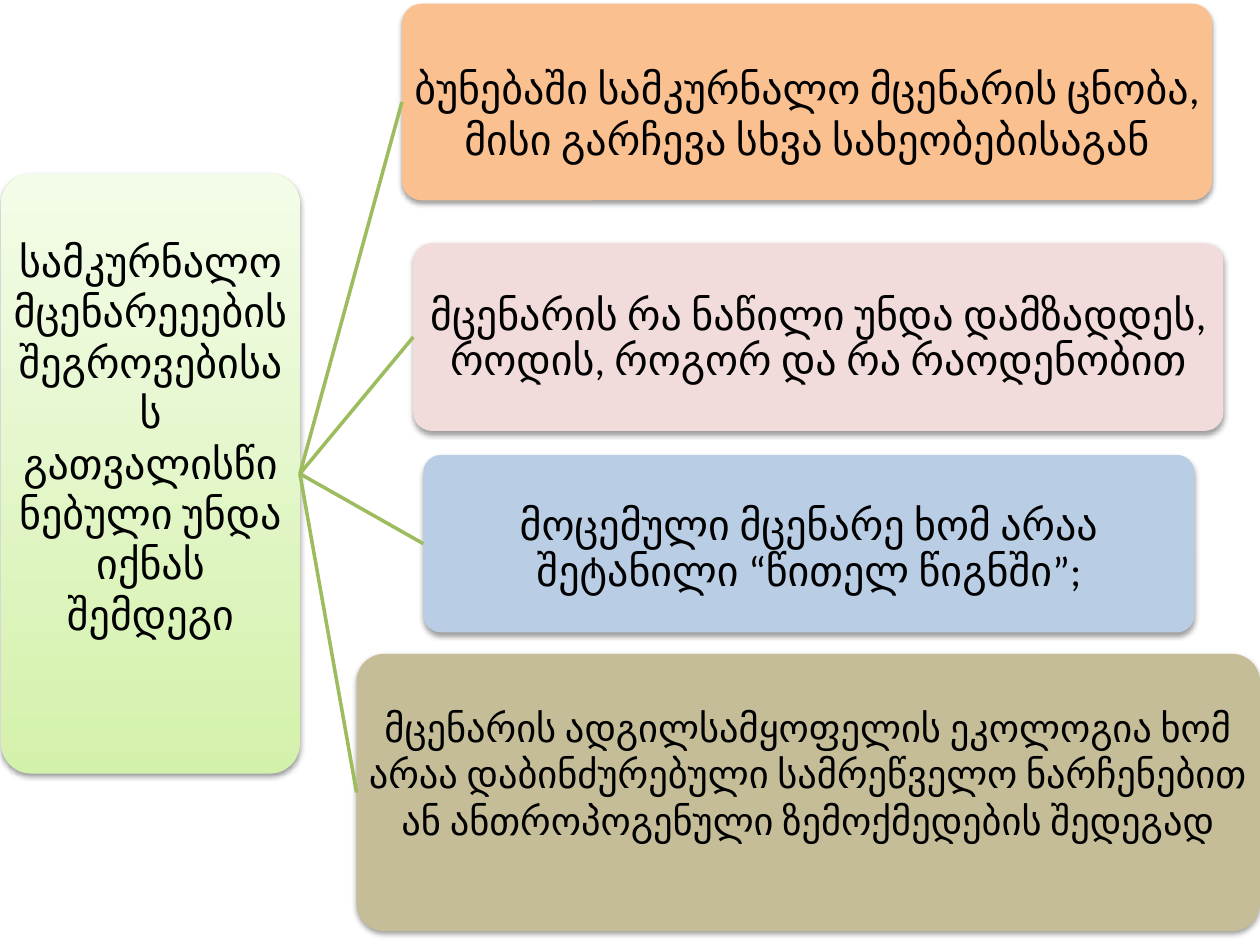
from lxml import etree
from pptx import Presentation
from pptx.dml.color import RGBColor
from pptx.enum import shapes, text
from pptx.oxml import ns
from pptx.util import Inches, Pt

BLACK = RGBColor(0x00, 0x00, 0x00)
BRANCH_GREEN = RGBColor(0x9C, 0xBC, 0x5D)
ROOT_GREENS = (RGBColor(0xD4, 0xF1, 0xAB), RGBColor(0xF3, 0xFC, 0xE8))
ORANGE = RGBColor(0xFA, 0xC0, 0x90)
PINK = RGBColor(0xF2, 0xDC, 0xDB)
BLUE = RGBColor(0xB9, 0xCD, 0xE5)
TAN = RGBColor(0xC4, 0xBD, 0x97)

FONT = "Calibri"
MARGIN = 0.02

# Content: wording, box (left, top, width, height), size, line spacing,
# and how far the text sits below (+) or above (-) the middle of its box
ROOT = ("სამკურნალო მცენარეეების შეგროვებისას გათვალისწინებული უნდა იქნას შემდეგი",
        (0.01, 1.38, 2.37, 4.76), 24, 1.0, -0.29)
CONDITIONS = [
    (("ბუნებაში სამკურნალო მცენარის ცნობა, მისი გარჩევა სხვა სახეობებისაგან",
      (3.19, 0.03, 6.43, 1.56), 24, 1.0, 0.09), ORANGE),
    (("მცენარის რა ნაწილი უნდა დამზადდეს, როდის, როგორ და რა რაოდენობით",
      (3.28, 1.93, 6.43, 1.49), 24, 0.9, 0.02), PINK),
    (("მოცემული მცენარე ხომ არაა შეტანილი “წითელ წიგნში”;",
      (3.36, 3.61, 6.12, 1.41), 24, 0.9, 0.05), BLUE),
    (("მცენარის ადგილსამყოფელის ეკოლოგია ხომ არაა დაბინძურებული სამრეწველო "
      "ნარჩენებით ან ანთროპოგენული ზემოქმედების შედეგად",
      (2.83, 5.19, 7.17, 2.2), 22, 1.0, -0.15), TAN),
]


def add_effects(item, shadow):
    """Give the item a soft drop shadow, or none at all."""
    effects = etree.SubElement(item._element.spPr, ns.qn("a:effectLst"))
    if shadow:
        outer = etree.SubElement(effects, ns.qn("a:outerShdw"), blurRad=str(Pt(3.1)),
                                 dist=str(Pt(1.6)), dir="5400000", rotWithShape="0")
        color = etree.SubElement(outer, ns.qn("a:srgbClr"), val="000000")
        etree.SubElement(color, ns.qn("a:alpha"), val="38000")


def add_box(slide, content):
    wording, place, size, spacing, shift = content
    box = slide.shapes.add_shape(shapes.MSO_SHAPE.ROUNDED_RECTANGLE,
                                 *(Inches(length) for length in place))
    box.adjustments[0] = 0.1
    box.line.fill.background()
    add_effects(box, shadow=True)

    frame = box.text_frame
    frame.word_wrap = True
    frame.vertical_anchor = text.MSO_ANCHOR.MIDDLE
    frame.margin_left = frame.margin_right = Inches(MARGIN)
    frame.margin_top = Inches(MARGIN + 2 * max(shift, 0))
    frame.margin_bottom = Inches(MARGIN + 2 * max(-shift, 0))

    paragraph = frame.paragraphs[0]
    paragraph.alignment = text.PP_ALIGN.CENTER
    paragraph.line_spacing = spacing
    run = paragraph.add_run()
    run.text = wording
    run.font.name = FONT
    run.font.size = Pt(size)
    run.font.color.rgb = BLACK
    return box


def add_branch(slide, root, condition):
    branch = slide.shapes.add_connector(
        shapes.MSO_CONNECTOR.STRAIGHT,
        root.left + root.width, root.top + root.height // 2,
        condition.left, condition.top + condition.height // 2)
    branch.line.color.rgb = BRANCH_GREEN
    branch.line.width = Pt(2)
    add_effects(branch, shadow=False)


def main():
    deck = Presentation()
    deck.slide_width, deck.slide_height = Inches(10), Inches(7.5)
    slide = deck.slides.add_slide(deck.slide_layouts[6])

    # Root topic, fading from green at the bottom to pale at the top
    root = add_box(slide, ROOT)
    root.fill.gradient()
    root.fill.gradient_angle = 90
    for stop, color in zip(root.fill.gradient_stops, ROOT_GREENS):
        stop.color.rgb = color

    # Conditions, each joined to the root
    for content, color in CONDITIONS:
        condition = add_box(slide, content)
        condition.fill.solid()
        condition.fill.fore_color.rgb = color
        add_branch(slide, root, condition)

    deck.save("out.pptx")


if __name__ == "__main__":
    main()
